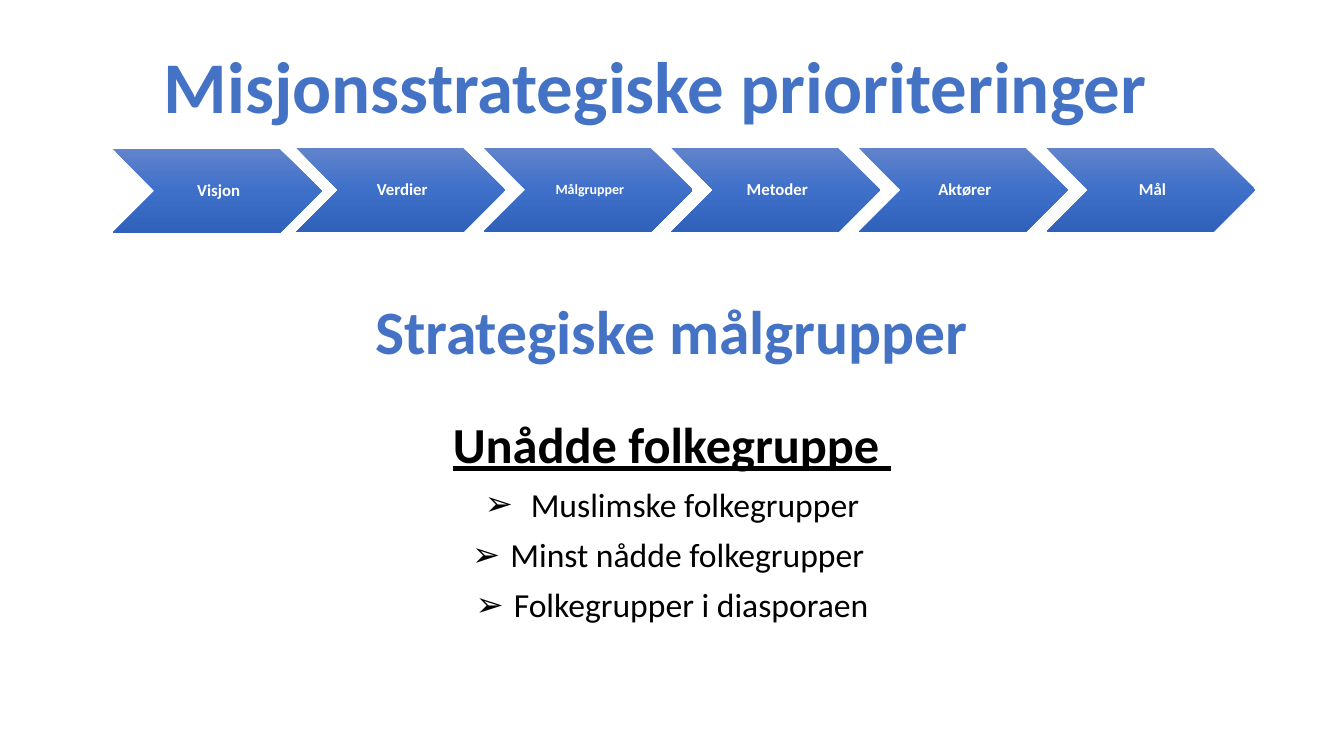
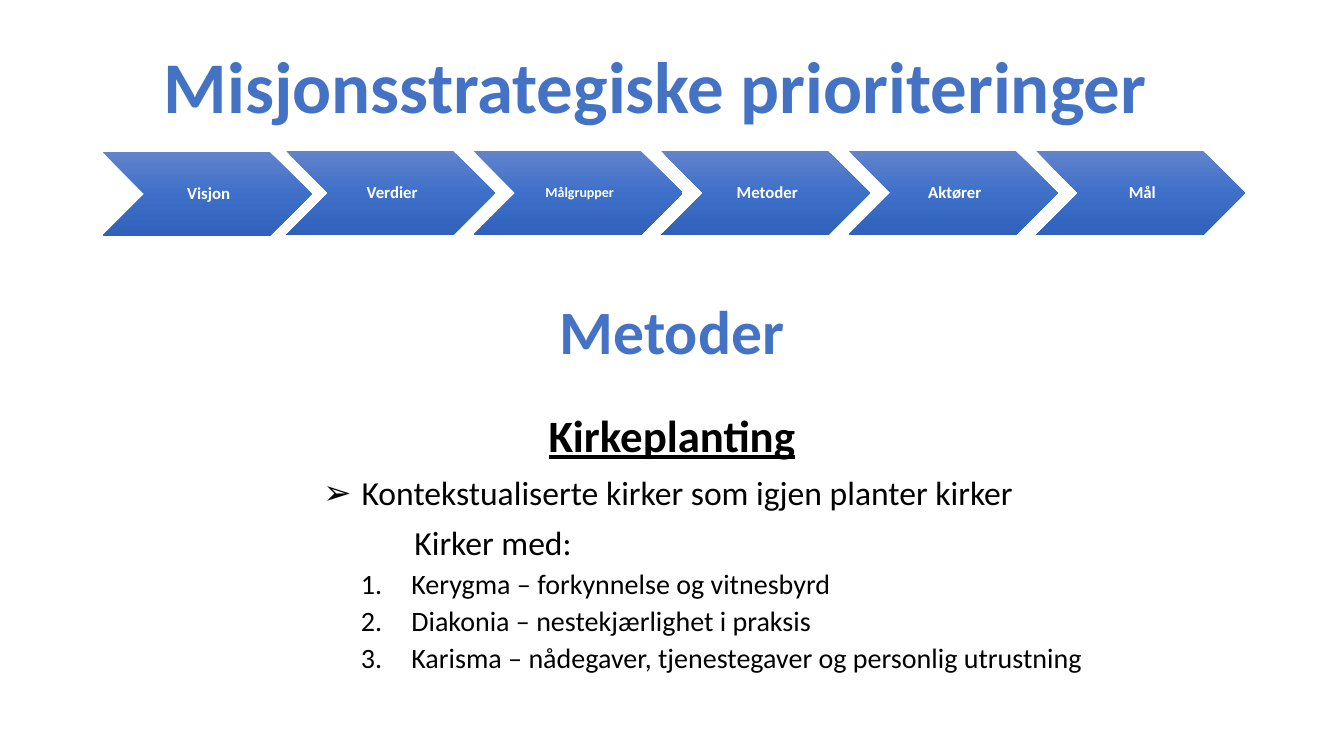
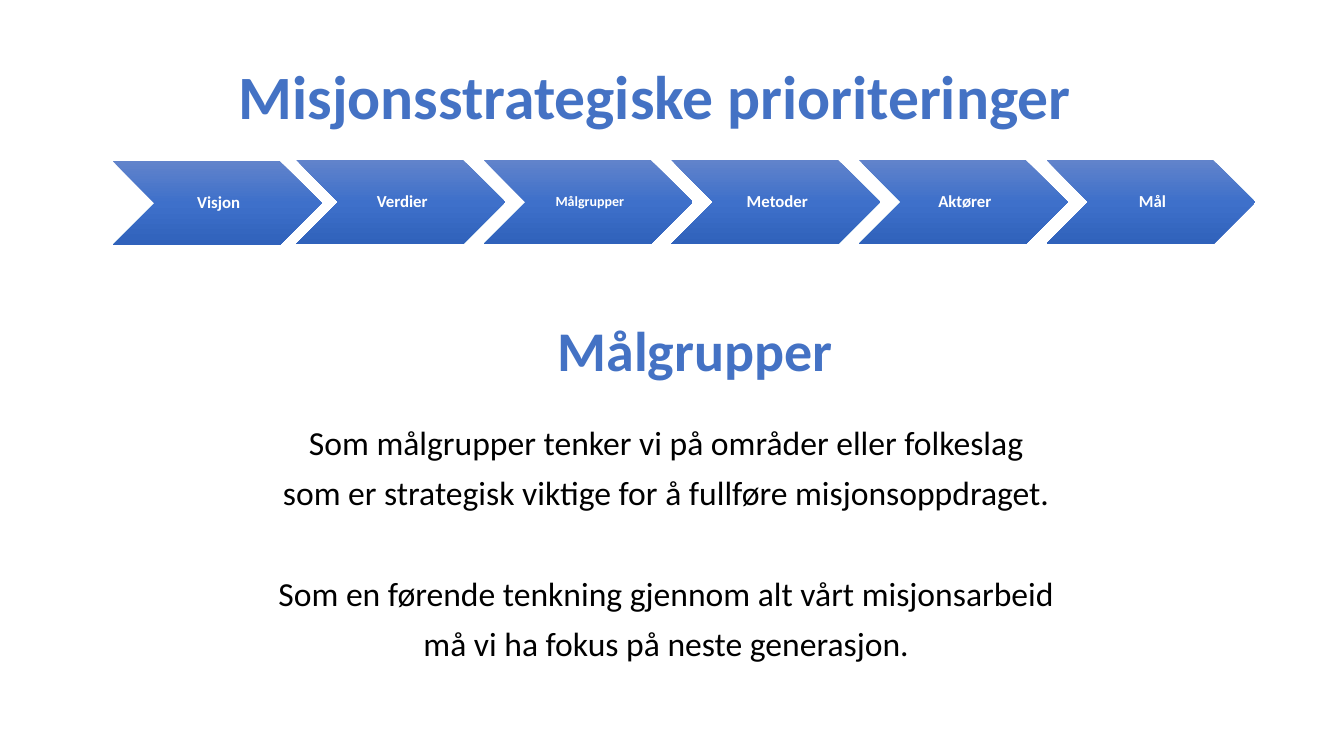
from copy import deepcopy
from dataclasses import dataclass

from lxml import etree
from pptx import Presentation
from pptx.dml.color import RGBColor
from pptx.enum.shapes import MSO_SHAPE
from pptx.enum.text import MSO_ANCHOR, MSO_AUTO_SIZE, PP_ALIGN
from pptx.oxml.ns import qn
from pptx.util import Inches, Pt

CHEVRON = MSO_SHAPE.CHEVRON
CENTER, LEFT = PP_ALIGN.CENTER, PP_ALIGN.LEFT
TOP, MIDDLE = MSO_ANCHOR.TOP, MSO_ANCHOR.MIDDLE
NO_AUTOFIT = MSO_AUTO_SIZE.NONE

FONT = "Calibri"
BLUE, BLACK, WHITE = "4472C4", "000000", "FFFFFF"
GRADIENT = [(0, "6183CB"), (0.5, "3E70CA"), (1, "3062BB")]
LINE_SPACING = 0.9
TITLE = "Misjonsstrategiske prioriteringer"
STEPS = ["Visjon", "Verdier", "Målgrupper", "Metoder", "Aktører", "Mål"]
STEP_WIDTH, STEP_HEIGHT, STEP_PITCH = 2.07, 0.83, 1.86
FIRST_STEP_SHIFT = 0.04  # the first chevron sits closer to the second
FIRST_STEP_DROP = 0.01


@dataclass
class Line:
    """One paragraph; indents in inches, sizes and spacing in points."""
    text: str
    size: float = 24
    color: str = BLACK
    bold: bool = False
    underline: bool = False
    before: float = 10
    left: float = 0
    hanging: float = 0
    bullet: str = ""
    numbered: bool = False
    align: PP_ALIGN = CENTER


@dataclass
class Page:
    """Content and placement of one slide."""
    title_top: float
    title_size: float
    steps_left: float
    steps_top: float
    body_left: float
    body_top: float
    body_width: float
    lines: list[Line]


def heading(text: str, size: float, left: float = 0) -> Line:
    return Line(text, size, BLUE, bold=True, before=0, left=left)


def subheading(text: str, size: float, before: float) -> Line:
    return Line(text, size, bold=True, underline=True, before=before)


def arrow_item(text: str) -> Line:
    return Line(text, left=0.38, hanging=0.38, bullet="➢")


def numbered_item(text: str) -> Line:
    return Line(text, 20, before=5, left=3.5, hanging=0.5, numbered=True, align=LEFT)


PAGES = [
    Page(0.45, 52, 1.12, 1.47, 0.48, 2.94, 12.37, [
        heading("Strategiske målgrupper", 44),
        subheading("Unådde folkegruppe ", 36, before=37),
        arrow_item(" Muslimske folkegrupper"),
        arrow_item("Minst nådde folkegrupper "),
        arrow_item("Folkegrupper i diasporaen"),
    ]),
    Page(0.45, 52, 1.02, 1.5, 0.48, 2.94, 12.37, [
        heading("Metoder", 44),
        subheading("Kirkeplanting", 32, before=33),
        arrow_item("Kontekstualiserte kirker som igjen planter kirker "),
        Line("Kirker med:", left=3.53, align=LEFT),
        numbered_item("Kerygma – forkynnelse og vitnesbyrd"),
        numbered_item("Diakonia – nestekjærlighet i praksis"),
        numbered_item("Karisma – nådegaver, tjenestegaver og personlig utrustning"),
    ]),
    Page(0.61, 44, 1.12, 1.59, 0.31, 3.16, 12.67, [
        heading("Målgrupper", 40, left=0.5),
        Line("Som målgrupper tenker vi på områder eller folkeslag ", before=30),
        Line("som er strategisk viktige for å fullføre misjonsoppdraget. "),
        Line("Som en førende tenkning gjennom alt vårt misjonsarbeid ", before=46),
        Line("må vi ha fokus på neste generasjon. "),
    ]),
]


def rgb(color: str) -> RGBColor:
    return RGBColor.from_string(color)


def place(shape, left: float, top: float, width: float, height: float) -> None:
    shape.left, shape.top = Inches(left), Inches(top)
    shape.width, shape.height = Inches(width), Inches(height)


def format_paragraph(paragraph, line: Line) -> None:
    paragraph.text = line.text
    paragraph.alignment = line.align
    paragraph.line_spacing = LINE_SPACING
    paragraph.space_before = Pt(line.before)
    paragraph.space_after = Pt(0)
    for run in paragraph.runs:
        font = run.font
        font.name, font.size = FONT, Pt(line.size)
        font.bold, font.underline = line.bold, line.underline
        font.color.rgb = rgb(line.color)
    # Indent and bullet
    properties = paragraph._p.get_or_add_pPr()
    properties.set("marL", str(Inches(line.left)))
    properties.set("indent", str(-Inches(line.hanging)))
    if line.bullet:
        etree.SubElement(properties, qn("a:buChar")).set("char", line.bullet)
    elif line.numbered:
        etree.SubElement(properties, qn("a:buAutoNum")).set("type", "arabicPeriod")
    else:
        etree.SubElement(properties, qn("a:buNone"))


def fill_text(shape, lines: list[Line], anchor: MSO_ANCHOR = TOP) -> None:
    text_frame = shape.text_frame
    text_frame.word_wrap = True
    text_frame.auto_size = NO_AUTOFIT
    text_frame.vertical_anchor = anchor
    for index, line in enumerate(lines):
        paragraph = text_frame.paragraphs[0] if index == 0 else text_frame.add_paragraph()
        format_paragraph(paragraph, line)


def fill_gradient(shape) -> None:
    shape.fill.gradient()
    shape.fill.gradient_angle = 270
    stop_list = shape._element.spPr.find(".//" + qn("a:gsLst"))
    stop_list.insert(1, deepcopy(stop_list[0]))
    for stop, (position, color) in zip(shape.fill.gradient_stops, GRADIENT):
        stop.position = position
        stop.color.rgb = rgb(color)


def add_steps(slide, left: float, top: float) -> None:
    """Draw the row of chevrons as one group."""
    group = slide.shapes.add_group_shape()
    for index, label in enumerate(STEPS):
        is_first = index == 0
        step_left = left + index * STEP_PITCH - (0 if is_first else FIRST_STEP_SHIFT)
        step_top = top + (FIRST_STEP_DROP if is_first else 0)
        chevron = group.shapes.add_shape(
            CHEVRON, Inches(step_left), Inches(step_top),
            Inches(STEP_WIDTH), Inches(STEP_HEIGHT))
        chevron.shadow.inherit = False
        chevron.line.fill.background()
        fill_gradient(chevron)
        size = 10 if label == "Målgrupper" else 12
        fill_text(chevron, [Line(label, size, WHITE, bold=True, before=0)], MIDDLE)
        text_frame = chevron.text_frame
        text_frame.margin_left = Inches(0.05)
        text_frame.margin_right = Inches(0.02)
        text_frame.margin_top = text_frame.margin_bottom = Inches(0.02)


def add_page(presentation, page: Page) -> None:
    slide = presentation.slides.add_slide(presentation.slide_layouts[1])
    title, body = slide.placeholders
    # Title
    place(title, 0.31, page.title_top, 12.38, 0.95)
    fill_text(title, [Line(TITLE, page.title_size, BLUE, bold=True, before=0)])
    # Heading and list
    place(body, page.body_left, page.body_top, page.body_width, 4)
    fill_text(body, page.lines)
    # Process row
    add_steps(slide, page.steps_left, page.steps_top)


def main() -> None:
    presentation = Presentation()
    presentation.slide_width, presentation.slide_height = Inches(13.33), Inches(7.5)
    for page in PAGES:
        add_page(presentation, page)
    presentation.save("out.pptx")


if __name__ == "__main__":
    main()
